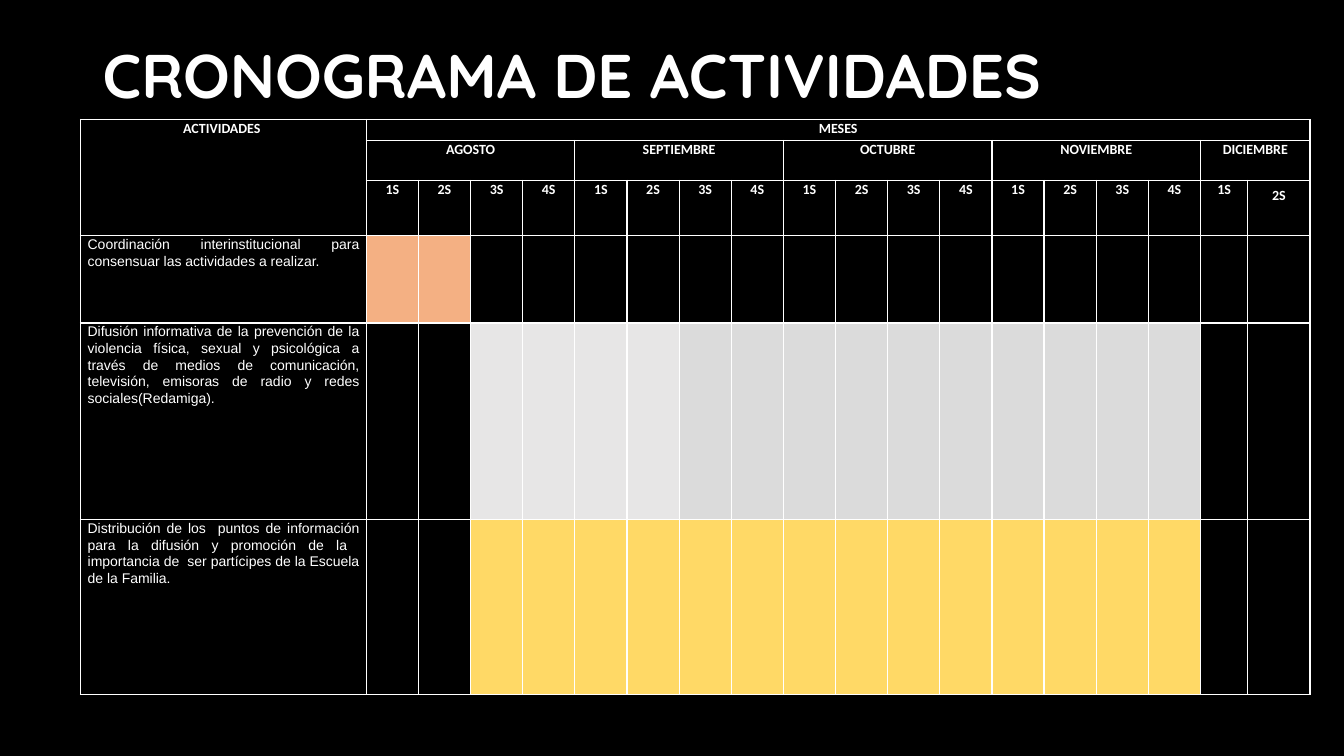
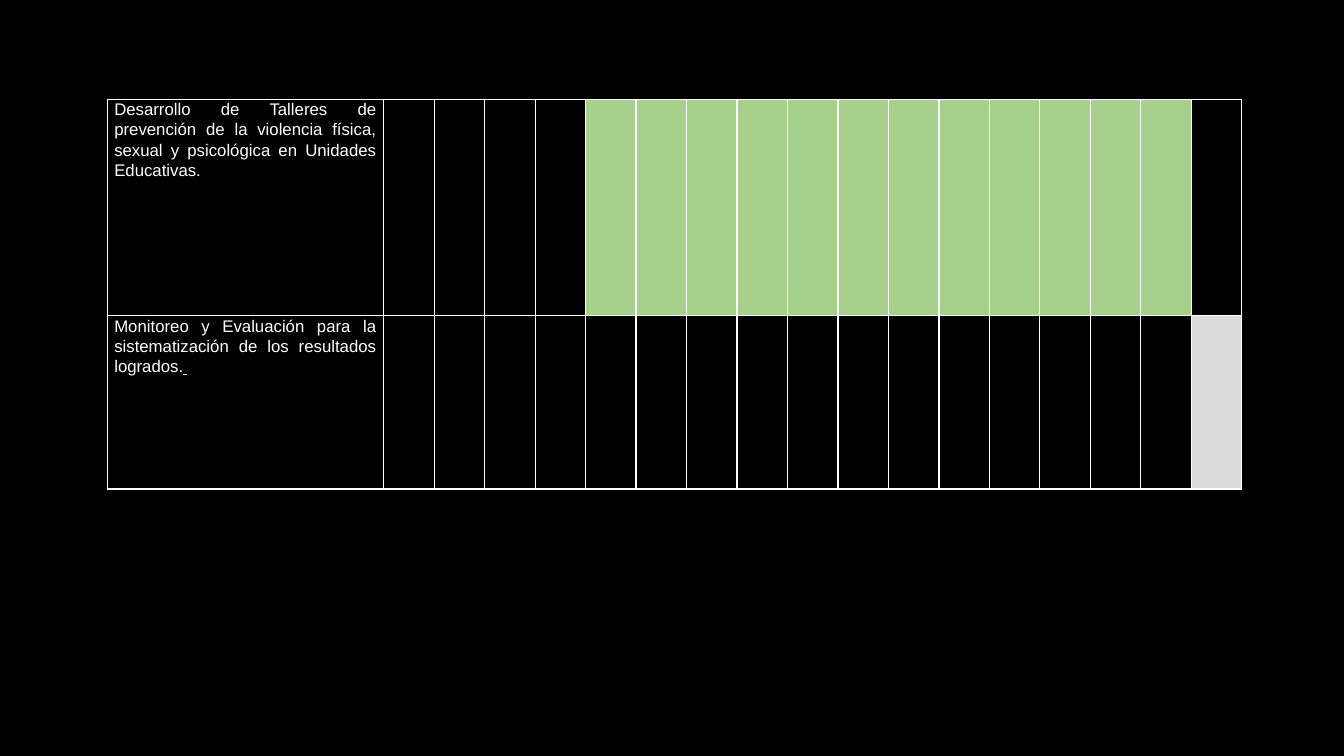
import pptx
import pptx.dml.color
import pptx.enum.text
import pptx.oxml
import pptx.oxml.ns
import pptx.util
from lxml import etree

Cm = pptx.util.Cm
Pt = pptx.util.Pt
RGBColor = pptx.dml.color.RGBColor
ALIGN = pptx.enum.text.PP_ALIGN

# Shared look
BLACK = RGBColor(0x00, 0x00, 0x00)
WHITE = RGBColor(0xFF, 0xFF, 0xFF)
ORANGE = RGBColor(0xF4, 0xB0, 0x83)
LIGHT_GREY = RGBColor(0xE7, 0xE6, 0xE6)
GREY = RGBColor(0xDB, 0xDB, 0xDB)
YELLOW = RGBColor(0xFF, 0xD9, 0x66)
GREEN = RGBColor(0xA8, 0xD0, 0x8D)
TITLE_FONT, HEADER_FONT, BODY_FONT = "Quicksand", "Calibri", "Arial"
BORDER_WIDTH = Pt(1)
LINE_SPACING = 1.07

# Schedule content: months with their number of weeks
MONTHS = [("AGOSTO", 4), ("SEPTIEMBRE", 4), ("OCTUBRE", 4),
          ("NOVIEMBRE", 4), ("DICIEMBRE", 2)]
HEADER_ROWS = 3

# Activities: text, then bars as (first column, last column, colour)
FIRST_ACTIVITIES = [
    ("Coordinación interinstitucional para consensuar las actividades a realizar.",
     [(1, 2, ORANGE)]),
    ("Difusión informativa de la prevención de la violencia física, sexual y "
     "psicológica a través de medios de comunicación, televisión, emisoras de "
     "radio y redes sociales(Redamiga). ",
     [(3, 6, LIGHT_GREY), (7, 16, GREY)]),
    ("Distribución de los  puntos de información para la difusión y promoción "
     "de la  importancia de  ser partícipes de la Escuela de la Familia.",
     [(3, 16, YELLOW)]),
]
LAST_ACTIVITIES = [
    ("Desarrollo de Talleres de prevención de la violencia física, sexual y "
     "psicológica en Unidades Educativas. ",
     [(5, 16, GREEN)]),
    ("Monitoreo y Evaluación para la sistematización de los resultados logrados.",
     [(17, 17, GREY)]),
]


def add_black_slide(presentation):
    slide = presentation.slides.add_slide(presentation.slide_layouts[6])
    slide.background.fill.solid()
    slide.background.fill.fore_color.rgb = BLACK
    return slide


def add_run(paragraph, text, font_name, size, bold=False, underline=False):
    run = paragraph.add_run()
    run.text = text
    run.font.name = font_name
    run.font.size = Pt(size)
    run.font.bold = bold
    run.font.underline = underline
    run.font.color.rgb = WHITE


def add_title(slide, text):
    box = slide.shapes.add_textbox(Cm(2.34), Cm(1.02), Cm(29.21), Cm(2))
    box.text_frame.word_wrap = True
    paragraph = box.text_frame.paragraphs[0]
    paragraph.line_spacing = 0.9
    add_run(paragraph, text, TITLE_FONT, 44, bold=True)


def set_margins(cell, side, vertical):
    cell.margin_left = cell.margin_right = Cm(side)
    cell.margin_top = cell.margin_bottom = Cm(vertical)


def set_borders(cell):
    properties = cell._tc.get_or_add_tcPr()
    for position, side in enumerate(("lnL", "lnR", "lnT", "lnB")):
        line = pptx.oxml.parse_xml(
            f'<a:{side} {pptx.oxml.ns.nsdecls("a")} w="{BORDER_WIDTH}">'
            f'<a:solidFill><a:srgbClr val="{WHITE}"/></a:solidFill></a:{side}>')
        properties.insert(position, line)


def add_grid(slide, left, top, column_widths, row_heights):
    """Add a table of empty, transparent cells with white borders."""
    frame = slide.shapes.add_table(
        len(row_heights), len(column_widths), Cm(left), Cm(top),
        Cm(sum(column_widths)), Cm(sum(row_heights)))
    table = frame.table
    table.first_row = table.horz_banding = False
    for column, width in zip(table.columns, column_widths):
        column.width = Cm(width)
    for row, height in zip(table.rows, row_heights):
        row.height = Cm(height)
        for cell in row.cells:
            set_margins(cell, 0.18, 0)
            cell.fill.background()
            set_borders(cell)
            # Small empty paragraphs keep the low rows from growing
            etree.SubElement(cell.text_frame.paragraphs[0]._p,
                             pptx.oxml.ns.qn("a:endParaRPr"), sz="1000")
    return table


def start_paragraph(cell, alignment):
    paragraph = cell.text_frame.paragraphs[0]
    paragraph.alignment = alignment
    paragraph.line_spacing = LINE_SPACING
    return paragraph


def write_header(cell, text):
    add_run(start_paragraph(cell, ALIGN.CENTER), text, HEADER_FONT, 10, bold=True)


def fill_header(table):
    last_column = len(table.columns) - 1
    table.cell(0, 0).merge(table.cell(HEADER_ROWS - 1, 0))
    write_header(table.cell(0, 0), "ACTIVIDADES ")
    table.cell(0, 1).merge(table.cell(0, last_column))
    write_header(table.cell(0, 1), "MESES")
    column = 1
    for month, weeks in MONTHS:
        table.cell(1, column).merge(table.cell(1, column + weeks - 1))
        write_header(table.cell(1, column), month)
        for week in range(weeks):
            write_header(table.cell(2, column + week), f"{week + 1}S")
        column += weeks
    set_margins(table.cell(2, last_column), 0.25, 0.13)


def fill_activities(table, activities, first_row, size):
    for row, (text, bars) in enumerate(activities, first_row):
        paragraph = start_paragraph(table.cell(row, 0), ALIGN.JUSTIFY)
        add_run(paragraph, text, BODY_FONT, size)
        for first, last, colour in bars:
            for column in range(first, last + 1):
                cell = table.cell(row, column)
                cell.fill.solid()
                cell.fill.fore_color.rgb = colour


def build_first_slide(presentation):
    slide = add_black_slide(presentation)
    widths = [7.2] + [21.03 / 16] * 16 + [1.19, 1.57]
    table = add_grid(slide, 2.03, 3.01, widths, [0.53, 1.01, 1.39, 2.2, 4.96, 4.41])
    fill_header(table)
    fill_activities(table, FIRST_ACTIVITIES, HEADER_ROWS, 10)
    add_title(slide, "CRONOGRAMA DE ACTIVIDADES")


def build_second_slide(presentation):
    slide = add_black_slide(presentation)
    widths = [6.97] + [21.63 / 17] * 17
    table = add_grid(slide, 2.7, 2.5, widths, [5.46, 4.36])
    fill_activities(table, LAST_ACTIVITIES, 0, 12)
    # Underlined space that closes the last activity
    closing = table.cell(1, 0).text_frame.paragraphs[0]
    add_run(closing, " ", HEADER_FONT, 11, bold=True, underline=True)


def main():
    presentation = pptx.Presentation()
    presentation.slide_width = Cm(33.87)
    presentation.slide_height = Cm(19.05)
    build_first_slide(presentation)
    build_second_slide(presentation)
    presentation.save("out.pptx")


if __name__ == "__main__":
    main()
